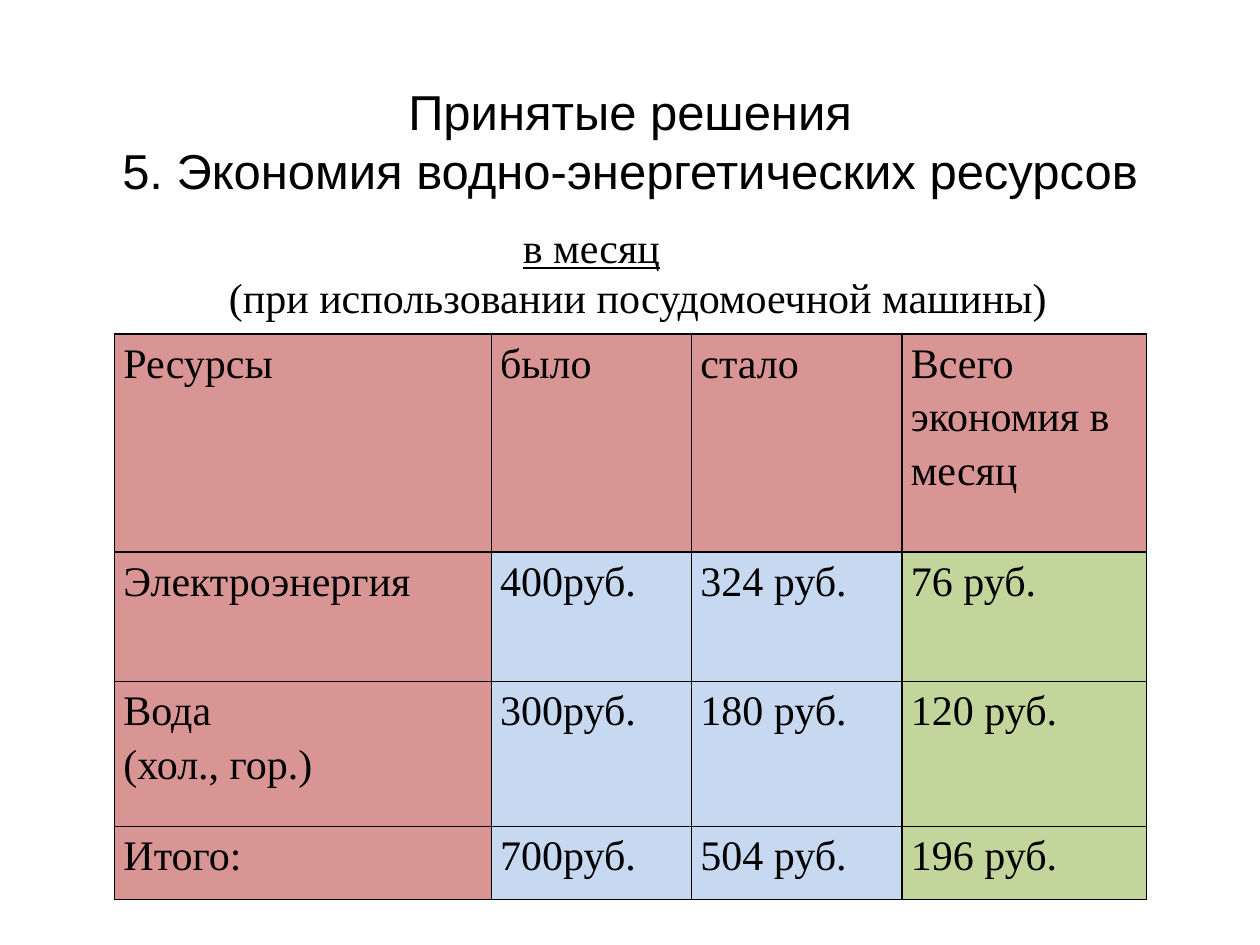
from lxml.etree import SubElement
from pptx import Presentation
from pptx.dml.color import RGBColor
from pptx.enum.text import MSO_ANCHOR, MSO_AUTO_SIZE, PP_ALIGN
from pptx.oxml.ns import qn
from pptx.util import Pt

BLACK, ROSE, BLUE, GREEN = "000000", "D99594", "C6D9F1", "C2D69B"
COLUMN_WIDTHS = [215.28, 114.48, 120.24, 139.68]
ROW_HEIGHTS = [124.56, 74.16, 82.8, 41.76]
SAVINGS = [
    ["Ресурсы", "было", "стало", "Всего экономия в месяц"],
    ["Электроэнергия", "400руб.", "324 руб.", "76 руб."],
    ["Вода\n(хол., гор.)", "300руб.", "180 руб.", "120 руб."],
    ["Итого:", "700руб.", "504 руб.", "196 руб."],
]


def color(hex_value):
    """Return the colour for a hex string."""
    return RGBColor.from_string(hex_value)


def format_text(frame, font_name, size, alignment=PP_ALIGN.LEFT, spacing=None):
    """Format every paragraph and run of a text frame."""
    for paragraph in frame.paragraphs:
        paragraph.alignment = alignment
        paragraph.line_spacing = spacing
        for run in paragraph.runs:
            run.font.name = font_name
            run.font.size = Pt(size)
            run.font.color.rgb = color(BLACK)


def set_margins(target, horizontal, vertical):
    """Set the inner margins of a cell or text frame."""
    target.margin_left = target.margin_right = Pt(horizontal)
    target.margin_top = target.margin_bottom = Pt(vertical)


def add_title(slide):
    """Fill and place the title placeholder."""
    title = slide.shapes.title
    title.left, title.top, title.width, title.height = Pt(36), Pt(26), Pt(648), Pt(108)
    frame = title.text_frame
    frame.text = "Принятые решения\v5. Экономия водно-энергетических ресурсов"
    frame.auto_size = MSO_AUTO_SIZE.NONE
    frame.vertical_anchor = MSO_ANCHOR.MIDDLE
    set_margins(frame, 0, 0)
    format_text(frame, "Arial", 28, PP_ALIGN.CENTER)


def add_subtitle(slide):
    """Add the period and its condition above the table."""
    subtitle = slide.shapes.add_textbox(Pt(60), Pt(122.4), Pt(556), Pt(65.5))
    frame = subtitle.text_frame
    frame.word_wrap = True
    frame.vertical_anchor = MSO_ANCHOR.MIDDLE
    frame.text = "в месяц\n(при использовании посудомоечной машины)"
    period, condition = frame.paragraphs
    condition._p.get_or_add_pPr().set("marL", str(Pt(53)))
    format_text(frame, "Times New Roman", 24, PP_ALIGN.CENTER)
    period.runs[0].font.underline = True


def add_borders(cell):
    """Draw a thin black line on each side of a cell."""
    properties = cell._tc.get_or_add_tcPr()
    for position, side in enumerate(("a:lnL", "a:lnR", "a:lnT", "a:lnB")):
        line = properties.makeelement(qn(side), {"w": str(Pt(1))})
        fill = SubElement(line, qn("a:solidFill"))
        SubElement(fill, qn("a:srgbClr"), val=BLACK)
        properties.insert(position, line)


def cell_fill(row, column):
    """Choose the fill for headings, amounts and savings."""
    if row == 0 or column == 0:
        return ROSE
    return GREEN if column == len(COLUMN_WIDTHS) - 1 else BLUE


def add_savings_table(slide):
    """Add the table of monthly savings."""
    table = slide.shapes.add_table(
        len(ROW_HEIGHTS), len(COLUMN_WIDTHS), Pt(65.5), Pt(190.8),
        Pt(sum(COLUMN_WIDTHS)), Pt(sum(ROW_HEIGHTS))).table
    for column, width in zip(table.columns, COLUMN_WIDTHS):
        column.width = Pt(width)
    for row, height in zip(table.rows, ROW_HEIGHTS):
        row.height = Pt(height)
    for row, entries in enumerate(SAVINGS):
        for column, entry in enumerate(entries):
            cell = table.cell(row, column)
            cell.text_frame.text = entry
            set_margins(cell, 5.04, 0)
            format_text(cell.text_frame, "Times New Roman", 24, spacing=1.15)
            cell.fill.solid()
            cell.fill.fore_color.rgb = color(cell_fill(row, column))
            add_borders(cell)


def main():
    """Build and save the slide."""
    presentation = Presentation()
    presentation.slide_width, presentation.slide_height = Pt(720), Pt(540)
    slide = presentation.slides.add_slide(presentation.slide_layouts[5])
    add_title(slide)
    add_savings_table(slide)
    add_subtitle(slide)
    presentation.save("out.pptx")


if __name__ == "__main__":
    main()
